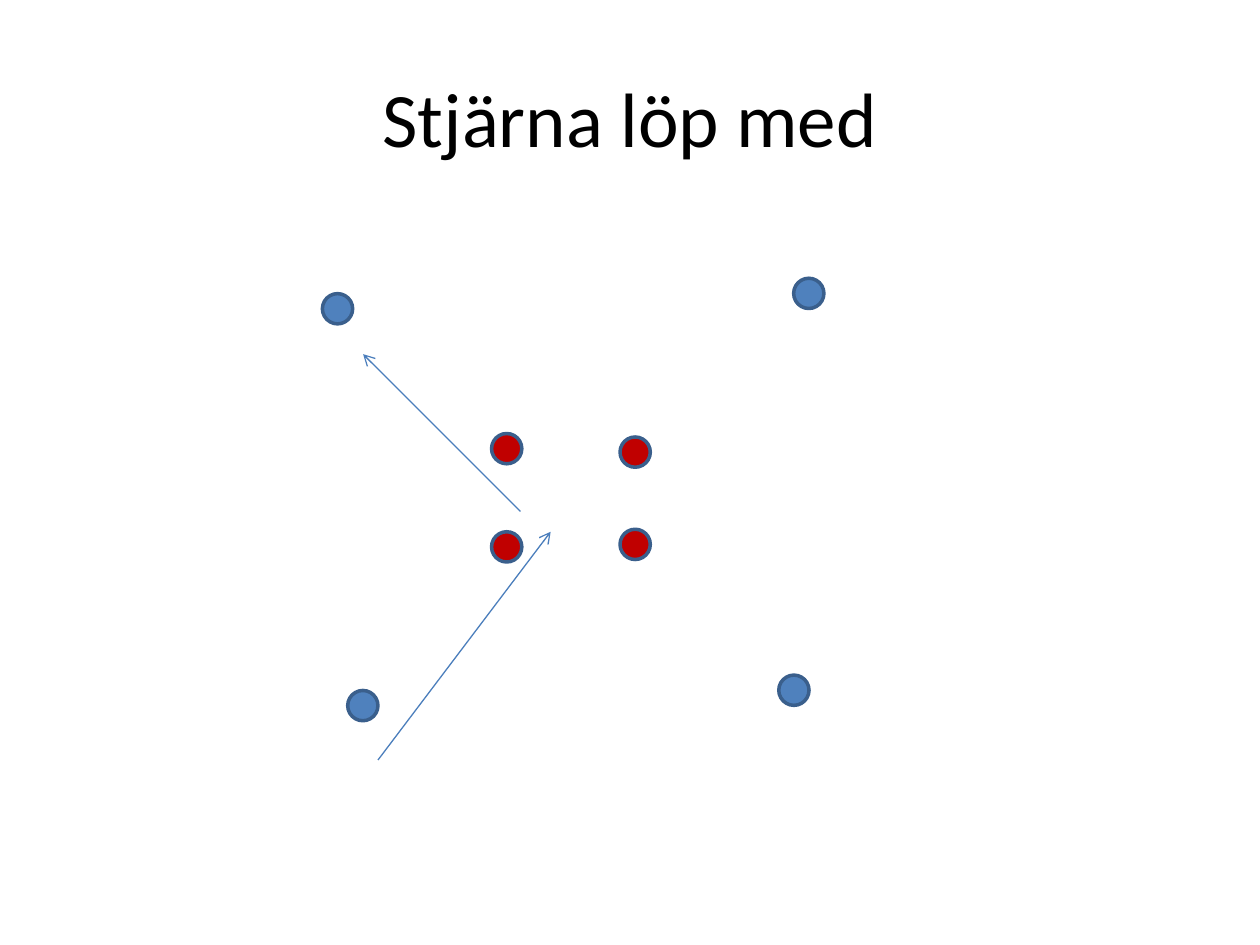
import pptx
import pptx.util
import pptx.dml.color
import pptx.enum.shapes
import pptx.enum.text
import pptx.oxml
import pptx.oxml.ns
from pptx.util import Cm

HUES = {"text": "000000", "blue": "4F81BD", "red": "C00000",
        "edge": "3A5F8C", "arrow": "4B7EBC"}


class Board:
    """Holds the style and the current slide."""
    font = "Calibri"
    dot_size = 0.61

    def __init__(self, slide):
        self.slide = slide

    def hue(self, name):
        return pptx.dml.color.RGBColor.from_string(HUES[name])

    def title(self, text, left, top, width, height):
        box = self.slide.shapes.add_textbox(
            Cm(left), Cm(top), Cm(width), Cm(height))
        frame = box.text_frame
        frame.word_wrap = True
        frame.vertical_anchor = pptx.enum.text.MSO_ANCHOR.MIDDLE
        para = frame.paragraphs[0]
        para.text = text
        para.alignment = pptx.enum.text.PP_ALIGN.CENTER
        para.font.name = self.font
        para.font.size = pptx.util.Pt(44)
        para.font.color.rgb = self.hue("text")

    def dot(self, left, top, fill):
        dot = self.slide.shapes.add_shape(
            pptx.enum.shapes.MSO_SHAPE.OVAL, Cm(left), Cm(top),
            Cm(self.dot_size), Cm(self.dot_size))
        dot.shadow.inherit = False
        dot.fill.solid()
        dot.fill.fore_color.rgb = self.hue(fill)
        dot.line.color.rgb = self.hue("edge")
        dot.line.width = pptx.util.Pt(2)

    def arrow(self, start, end):
        arrow = self.slide.shapes.add_connector(
            pptx.enum.shapes.MSO_CONNECTOR.STRAIGHT,
            *(Cm(value) for value in (*start, *end)))
        arrow.line.color.rgb = self.hue("arrow")
        arrow.line.width = pptx.util.Pt(0.75)
        # Open head at the end, no shadow
        space = pptx.oxml.ns.nsdecls("a")
        arrow.line._get_or_add_ln().append(
            pptx.oxml.parse_xml(f'<a:tailEnd {space} type="arrow"/>'))
        arrow._element.spPr.append(
            pptx.oxml.parse_xml(f"<a:effectLst {space}/>"))


def main():
    deck = pptx.Presentation()
    deck.slide_width, deck.slide_height = Cm(25.4), Cm(19.05)
    board = Board(deck.slides.add_slide(deck.slide_layouts[6]))

    board.title("Stjärna löp med", 1.27, 0.76, 22.86, 3.18)

    # Outer players in blue, inner square in red
    teams = {
        "blue": [(6.5, 5.92), (16, 5.61), (7.01, 13.92), (15.7, 13.61)],
        "red": [(9.91, 10.72), (12.5, 10.67), (9.91, 8.74), (12.5, 8.81)],
    }
    for fill, spots in teams.items():
        for left, top in spots:
            board.dot(left, top, fill)

    # Run into the middle, then out again
    board.arrow((7.62, 15.32), (11.1, 10.72))
    board.arrow((10.49, 10.31), (7.32, 7.14))

    deck.save("out.pptx")


if __name__ == "__main__":
    main()
